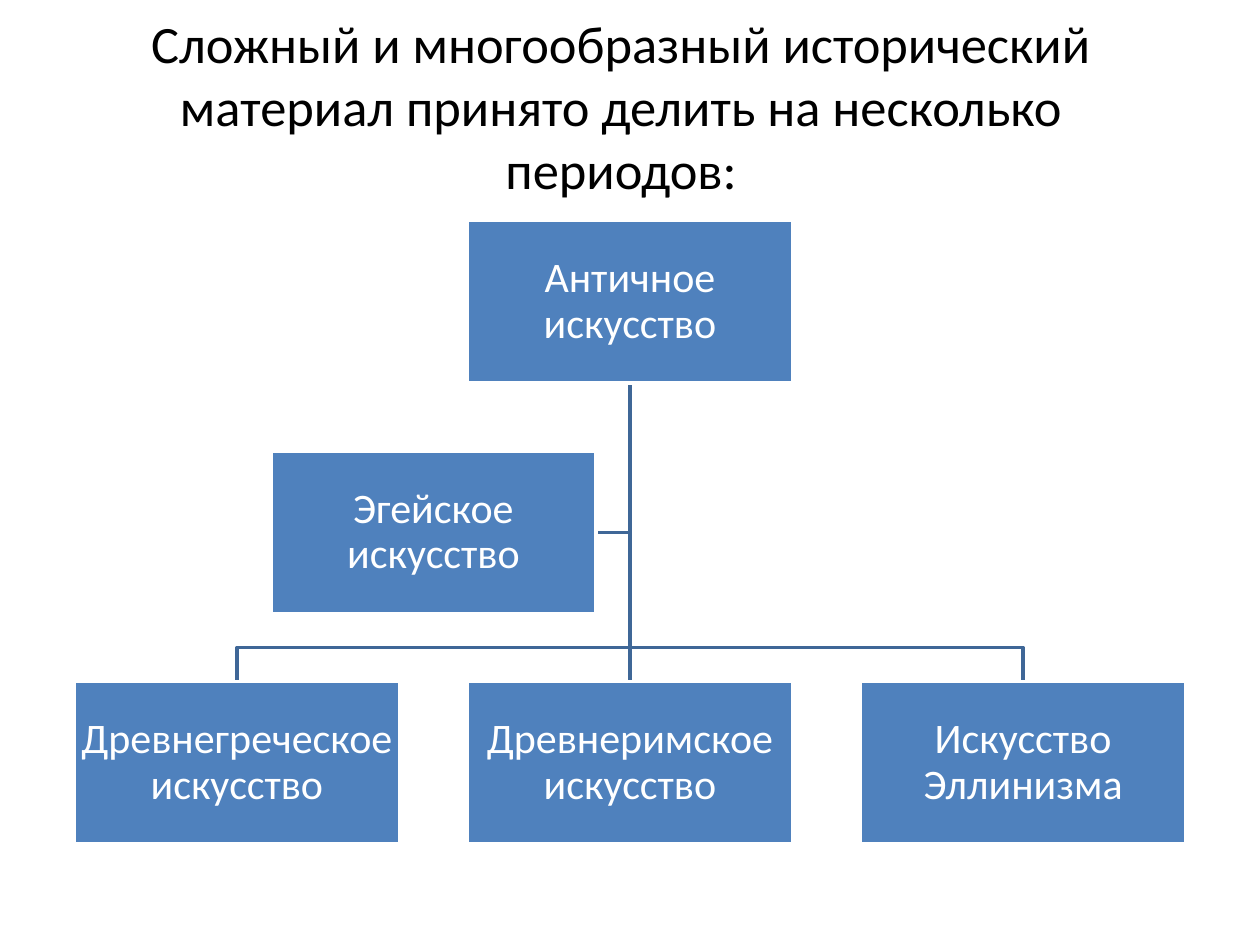
from typing import NamedTuple

from lxml import etree
from pptx import Presentation
from pptx.dml.color import RGBColor
from pptx.enum.shapes import MSO_CONNECTOR, MSO_SHAPE
from pptx.enum.text import MSO_ANCHOR, MSO_AUTO_SIZE, PP_ALIGN
from pptx.oxml.ns import qn
from pptx.util import Inches, Pt

RECT = MSO_SHAPE.RECTANGLE
STRAIGHT = MSO_CONNECTOR.STRAIGHT
CENTER = PP_ALIGN.CENTER
MIDDLE = MSO_ANCHOR.MIDDLE
NO_FIT = MSO_AUTO_SIZE.NONE

BLACK = RGBColor(0x00, 0x00, 0x00)
WHITE = RGBColor(0xFF, 0xFF, 0xFF)
BLUE = RGBColor(0x4F, 0x81, 0xBD)
DARK_BLUE = RGBColor(0x3F, 0x67, 0x97)

FONT = "Calibri"
LINE_WIDTH = Pt(2)
BOX_W, BOX_H = 2.58, 1.29
CENTER_X, COLUMN_STEP = 5, 3.12
ROOT_Y, ASSISTANT_Y, PERIOD_Y = 1.75, 3.58, 5.41
ROOT_BOTTOM = ROOT_Y + BOX_H
BRANCH_Y = 5.14


class Node(NamedTuple):
    text: str
    cx: float
    top: float


ROOT = Node("Античное искусство", CENTER_X, ROOT_Y)
ASSISTANT = Node("Эгейское искусство", CENTER_X - COLUMN_STEP / 2, ASSISTANT_Y)
PERIODS = [
    Node(text, CENTER_X + (i - 1) * COLUMN_STEP, PERIOD_Y)
    for i, text in enumerate(
        ["Древнегреческое искусство", "Древнеримское искусство", "Искусство Эллинизма"]
    )
]


def add_text(tf, text: str, size: float, color: RGBColor) -> None:
    tf.word_wrap = True
    tf.auto_size = NO_FIT
    tf.vertical_anchor = MIDDLE
    p = tf.paragraphs[0]
    p.alignment = CENTER
    r = p.add_run()
    r.text = text
    r.font.name = FONT
    r.font.size = Pt(size)
    r.font.color.rgb = color


def add_node(s, node: Node) -> None:
    sp = s.shapes.add_shape(
        RECT, Inches(node.cx - BOX_W / 2), Inches(node.top), Inches(BOX_W), Inches(BOX_H)
    )
    sp.shadow.inherit = False
    sp.fill.solid()
    sp.fill.fore_color.rgb = BLUE
    sp.line.color.rgb = WHITE
    sp.line.width = LINE_WIDTH
    tf = sp.text_frame
    tf.margin_left = tf.margin_right = tf.margin_top = tf.margin_bottom = Inches(0.02)
    add_text(tf, node.text, 24, WHITE)
    tf.paragraphs[0].line_spacing = 0.9


def add_elbow(s, *points: tuple[float, float]) -> None:
    """Draw an open bent line through the points, given in inches."""
    start, *rest = [(Inches(x), Inches(y)) for x, y in points]
    builder = s.shapes.build_freeform(*start)
    builder.add_line_segments(rest, close=False)
    sp = builder.convert_to_shape()
    sp.shadow.inherit = False
    sp.fill.background()
    sp.line.color.rgb = DARK_BLUE
    sp.line.width = LINE_WIDTH


def add_trunk(s) -> None:
    x = Inches(CENTER_X)
    line = s.shapes.add_connector(STRAIGHT, x, Inches(ROOT_BOTTOM), x, Inches(PERIOD_Y))
    line.line.color.rgb = DARK_BLUE
    line.line.width = LINE_WIDTH
    etree.SubElement(line._element.spPr, qn("a:effectLst"))


def main() -> None:
    prs = Presentation()
    prs.slide_width, prs.slide_height = Inches(10), Inches(7.5)
    s = prs.slides.add_slide(prs.slide_layouts[5])

    title = s.shapes.title
    title.left, title.top = Inches(0.43), Inches(0.21)
    title.width, title.height = Inches(9), Inches(1.25)
    add_text(
        title.text_frame,
        "Сложный и многообразный исторический материал принято делить на несколько периодов:",
        30,
        BLACK,
    )

    trunk_top = (CENTER_X, ROOT_BOTTOM)
    assistant_y = ASSISTANT_Y + BOX_H / 2
    add_elbow(
        s, trunk_top, (CENTER_X, assistant_y), (ASSISTANT.cx + BOX_W / 2, assistant_y)
    )
    add_trunk(s)
    for node in (PERIODS[0], PERIODS[-1]):
        add_elbow(
            s, trunk_top, (CENTER_X, BRANCH_Y), (node.cx, BRANCH_Y), (node.cx, PERIOD_Y)
        )

    for node in (ROOT, *PERIODS, ASSISTANT):
        add_node(s, node)

    prs.save("out.pptx")


if __name__ == "__main__":
    main()
